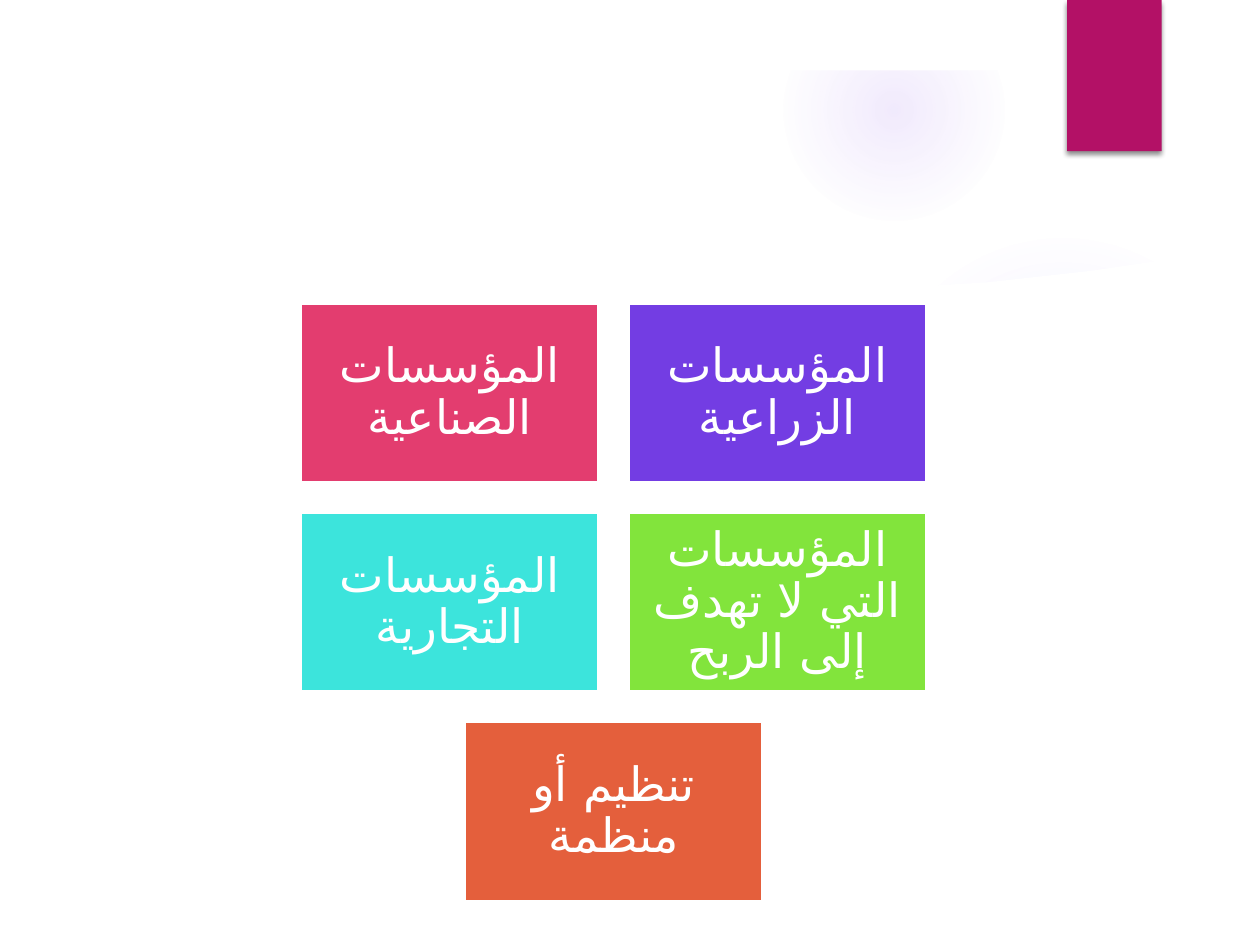
from lxml import etree
from pptx import Presentation
from pptx import util as u
from pptx.dml.color import RGBColor
from pptx.enum import shapes, text
from pptx.oxml import parse_xml
from pptx.oxml.ns import nsdecls, qn

COLORS = {
    "white": "FFFFFF", "glow": "9B6BF2", "ribbon": "B31166", "shadow": "000000",
    "pink": "E33D6F", "violet": "733DE3", "cyan": "3CE4DC", "green": "82E43C",
    "orange": "E45F3C",
}
FONT = "League Spartan"
ARABIC_FONT = "DejaVu Sans"


def rgb(name):
    return RGBColor.from_string(COLORS[name])


def write_text(tf, content, size=27, color="white", spacing=0.9):
    """Fill a text frame with one centred right-to-left paragraph."""
    tf.word_wrap = True
    tf.vertical_anchor = text.MSO_ANCHOR.MIDDLE
    tf.margin_left = tf.margin_right = u.Inches(0.11)
    tf.margin_top = tf.margin_bottom = u.Inches(0.11)
    p = tf.paragraphs[0]
    p.alignment = text.PP_ALIGN.CENTER
    p.line_spacing = spacing
    p._p.get_or_add_pPr().set("rtl", "1")
    r = p.add_run()
    r.text = content
    r.font.name = FONT
    r.font.size = u.Pt(size)
    r.font.color.rgb = rgb(color)
    etree.SubElement(r._r.get_or_add_rPr(), qn("a:cs"), typeface=ARABIC_FONT)


class Deck:
    def __init__(self, width, height):
        self.prs = Presentation()
        self.prs.slide_width = u.Inches(width)
        self.prs.slide_height = u.Inches(height)
        self.s = self.prs.slides.add_slide(self.prs.slide_layouts[6])

    def paint(self, sp, fill, line=None):
        sp.shadow.inherit = False
        sp.fill.solid()
        sp.fill.fore_color.rgb = rgb(fill)
        if line:
            sp.line.color.rgb = rgb(line)
            sp.line.width = u.Pt(1.5)
        else:
            sp.line.fill.background()
        return sp

    def shape(self, kind, left, top, width, height, fill, line=None):
        box = [u.Inches(v) for v in (left, top, width, height)]
        return self.paint(self.s.shapes.add_shape(kind, *box), fill, line)

    def freeform(self, points, fill):
        pts = [(u.Inches(x), u.Inches(y)) for x, y in points]
        builder = self.s.shapes.build_freeform(*pts[0])
        builder.add_line_segments(pts[1:], close=True)
        return self.paint(builder.convert_to_shape(), fill)

    def glow(self, left, top, size, stops):
        """Circle that fades outwards; stops are (position, opacity) in percent."""
        sp = self.shape(shapes.MSO_SHAPE.OVAL, left, top, size, size, "glow")
        gs = "".join(
            f'<a:gs pos="{pos * 1000}"><a:srgbClr val="{COLORS["glow"]}">'
            f'<a:alpha val="{alpha * 1000}"/></a:srgbClr></a:gs>'
            for pos, alpha in stops)
        grad = parse_xml(
            f'<a:gradFill {nsdecls("a")} rotWithShape="1"><a:gsLst>{gs}</a:gsLst>'
            '<a:path path="circle"><a:fillToRect l="50000" t="50000" r="50000" '
            'b="50000"/></a:path></a:gradFill>')
        solid = sp._element.spPr.find(qn("a:solidFill"))
        solid.getparent().replace(solid, grad)

    def sweep(self, points, angle, opacity):
        sp = self.freeform(points, "white")
        sp.rotation = angle
        clr = sp._element.spPr.find(qn("a:solidFill")).find(qn("a:srgbClr"))
        etree.SubElement(clr, qn("a:alpha"), val=str(opacity * 1000))

    def ribbon(self, left, top, width, height):
        sp = self.shape(shapes.MSO_SHAPE.RECTANGLE, left, top, width, height, "ribbon")
        sp._element.spPr.find(qn("a:effectLst")).append(parse_xml(
            f'<a:outerShdw {nsdecls("a")} blurRad="{u.Pt(3)}" dist="{u.Pt(2)}" '
            f'dir="5400000" rotWithShape="0"><a:srgbClr val="{COLORS["shadow"]}">'
            '<a:alpha val="45000"/></a:srgbClr></a:outerShdw>'))

    def card(self, left, top, width, height, label, fill):
        sp = self.shape(shapes.MSO_SHAPE.RECTANGLE, left, top, width, height, fill, "white")
        write_text(sp.text_frame, label)


def draw_background(deck):
    deck.glow(6.89, 1.83, 3.08, [(0, 7), (36, 6), (69, 0)])
    deck.glow(6.22, 0, 1.75, [(0, 14), (36, 7), (73, 0)])
    deck.sweep([(6.99, 2.34), (7.6, 2.32), (8.3, 2.26), (9, 2.18), (9.56, 2.08),
                (9.51, 1.74), (9.01, 1.9), (8.5, 2.03), (8.01, 2.13),
                (7.47, 2.23), (6.96, 2.29)], 350.2, 20)
    deck.freeform([(0.53, 2.03), (0.53, 6.99), (9.47, 6.99), (9.47, 2.03),
                   (8.66, 2.15), (7.85, 2.24), (7.04, 2.29), (6.25, 2.33),
                   (5.48, 2.34), (4.39, 2.34), (3.38, 2.3), (2.49, 2.24),
                   (1.73, 2.17), (0.99, 2.09)], "white")
    border = deck.shape(shapes.MSO_SHAPE.FRAME, 0, 0, 10, 7.5, "white")
    border.adjustments[0] = 0.56 / 7.5
    deck.ribbon(8.47, 0, 0.75, 1.2)


def draw_cards(deck):
    width, height, gap = 2.36, 1.42, 0.24
    center, top = 4.87, 2.41
    rows = [
        [("المؤسسات الصناعية", "pink"), ("المؤسسات الزراعية", "violet")],
        [("المؤسسات التجارية", "cyan"), ("المؤسسات التي لا تهدف إلى الربح", "green")],
        [("تنظيم أو منظمة", "orange")],
    ]
    for i, row in enumerate(rows):
        left = center - (len(row) * (width + gap) - gap) / 2
        for j, (label, fill) in enumerate(row):
            deck.card(left + j * (width + gap), top + i * (height + gap),
                      width, height, label, fill)


def main():
    deck = Deck(10, 7.5)
    draw_background(deck)
    draw_cards(deck)
    deck.prs.save("out.pptx")


if __name__ == "__main__":
    main()
